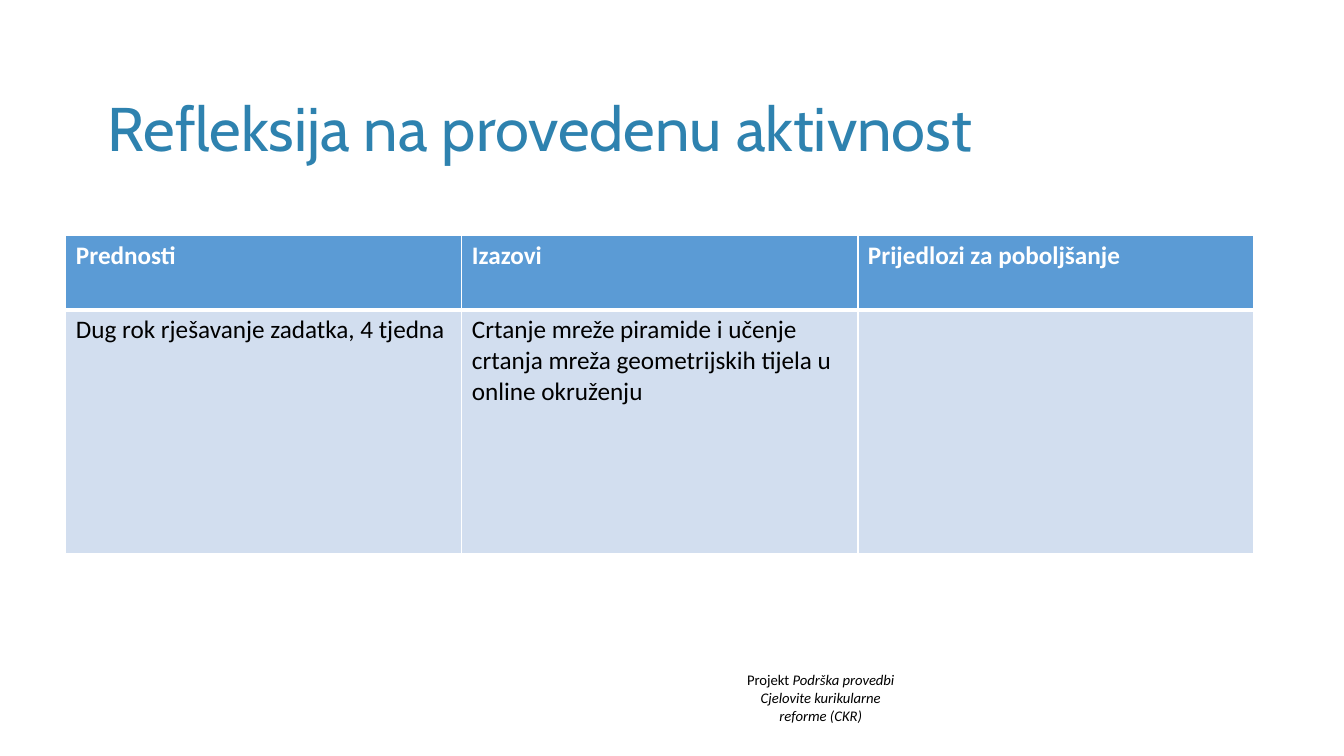
from lxml import etree
from pptx import Presentation
from pptx.dml.color import RGBColor
from pptx.enum.text import MSO_ANCHOR, MSO_AUTO_SIZE, PP_ALIGN
from pptx.oxml.ns import qn
from pptx.util import Cm, Pt

LEFT, CENTER = PP_ALIGN.LEFT, PP_ALIGN.CENTER
MIDDLE = MSO_ANCHOR.MIDDLE
FIXED = MSO_AUTO_SIZE.NONE

WHITE = RGBColor(0xFF, 0xFF, 0xFF)
BLACK = RGBColor(0x00, 0x00, 0x00)
TEAL = RGBColor(0x2E, 0x82, 0xAF)
BLUE = RGBColor(0x5B, 0x9B, 0xD5)
PALE = RGBColor(0xD2, 0xDE, 0xEF)

TITLE = {"name": "Cabin", "size": Pt(44), "color": TEAL}
HEAD = {"name": "Calibri", "size": Pt(18), "bold": True, "color": WHITE}
BODY = {"name": "Calibri", "size": Pt(18), "bold": False, "color": BLACK}
NOTE = {"name": "Calibri", "size": Pt(10.5), "color": BLACK}
ITALIC = {**NOTE, "italic": True}

ROWS = [
    (["Prednosti", "Izazovi", "Prijedlozi za poboljšanje"],
     Cm(1.87), HEAD, BLUE, 3),
    (["Dug rok rješavanje zadatka, 4 tjedna",
      "Crtanje mreže piramide i učenje crtanja mreža geometrijskih tijela "
      "u online okruženju", ""],
     Cm(6.13), BODY, PALE, 1),
]
FOOTER = [
    [("Projekt ", NOTE), ("Podrška provedbi", ITALIC)],
    [("Cjelovite kurikularne\vreforme (CKR)", ITALIC)],
]


def style(font, look):
    for key, value in look.items():
        if key == "color":
            font.color.rgb = value
        else:
            setattr(font, key, value)


def add_title(slide, text):
    title = slide.shapes.title
    place = {"left": Cm(2.46), "top": Cm(1.47),
             "width": Cm(29.21), "height": Cm(3.68)}
    for key, value in place.items():
        setattr(title, key, value)
    frame = title.text_frame
    frame.text = text
    frame.auto_size = FIXED
    frame.vertical_anchor = MIDDLE
    para = frame.paragraphs[0]
    para.alignment = LEFT
    para.line_spacing = 0.9
    style(para.runs[0].font, look=TITLE)


def add_edges(cell, base):
    props = cell._tc.get_or_add_tcPr()
    widths = {"a:lnL": 1, "a:lnR": 1, "a:lnT": 1, "a:lnB": base}
    for spot, (tag, width) in enumerate(widths.items()):
        line = etree.Element(qn(tag), w=str(Pt(width)))
        fill = etree.SubElement(line, qn("a:solidFill"))
        etree.SubElement(fill, qn("a:srgbClr"), val=str(WHITE))
        props.insert(spot, line)


def add_grid(slide):
    wide = Cm(9.98)
    count = len(ROWS[0][0])
    high = sum(row[1] for row in ROWS)
    grid = slide.shapes.add_table(
        len(ROWS), count, Cm(1.66), Cm(5.94), wide * count, high).table
    for col in grid.columns:
        col.width = wide
    for row, (texts, height, look, fill, base) in zip(grid.rows, ROWS):
        row.height = height
        for cell, text in zip(row.cells, texts):
            cell.text = text
            style(cell.text_frame.paragraphs[0].font, look)
            cell.fill.solid()
            cell.fill.fore_color.rgb = fill
            add_edges(cell, base)


def add_note(slide, lines):
    box = slide.shapes.add_textbox(Cm(17.75), Cm(16.79), Cm(5.87), Cm(1.6))
    frame = box.text_frame
    frame.word_wrap = True
    for spot, parts in enumerate(lines):
        para = frame.add_paragraph() if spot else frame.paragraphs[0]
        para.alignment = CENTER
        for text, look in parts:
            for turn, piece in enumerate(text.split("\v")):
                if turn:
                    para.add_line_break()
                run = para.add_run()
                run.text = piece
                style(run.font, look)


def main():
    deck = Presentation()
    deck.slide_width, deck.slide_height = Cm(33.87), Cm(19.05)
    slide = deck.slides.add_slide(deck.slide_layouts[5])
    add_note(slide, FOOTER)
    add_title(slide, "Refleksija na provedenu aktivnost")
    add_grid(slide)
    deck.save("out.pptx")


if __name__ == "__main__":
    main()
